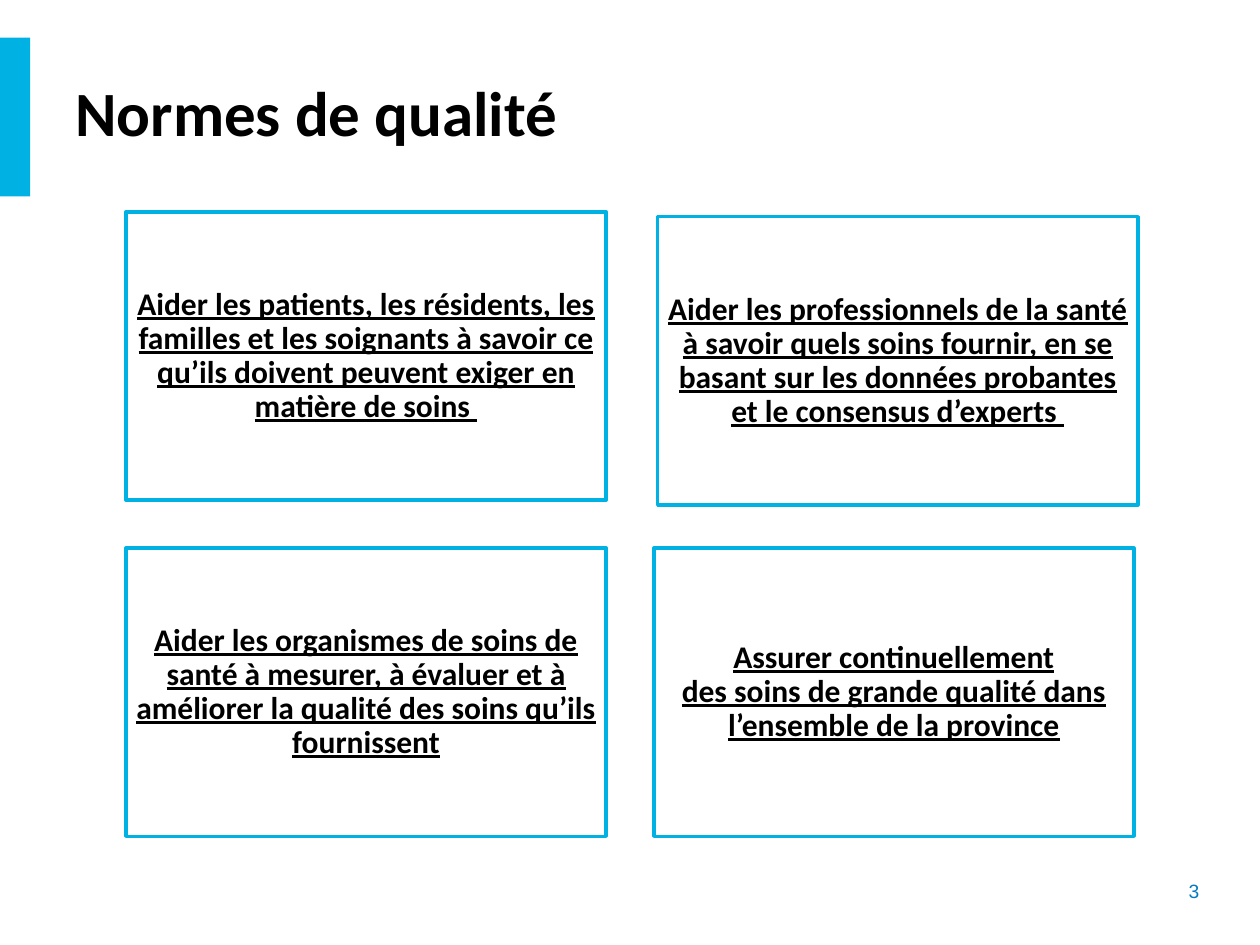
from dataclasses import dataclass

from pptx import Presentation
from pptx.dml.color import RGBColor
from pptx.enum.shapes import MSO_SHAPE
from pptx.enum.text import MSO_ANCHOR, PP_ALIGN
from pptx.util import Cm, Pt

RECT = MSO_SHAPE.RECTANGLE
MIDDLE, TOP = MSO_ANCHOR.MIDDLE, MSO_ANCHOR.TOP
LEFT, CENTER, RIGHT = PP_ALIGN.LEFT, PP_ALIGN.CENTER, PP_ALIGN.RIGHT


@dataclass(frozen=True)
class Theme:
    accent: RGBColor = RGBColor(0x00, 0xB2, 0xE3)
    number: RGBColor = RGBColor(0x04, 0x7B, 0xC1)
    ink: RGBColor = RGBColor(0, 0, 0)
    font: str = "Calibri"
    number_font: str = "Arial"
    title_size: int = 36
    card_size: int = 18
    number_size: int = 11
    border: int = 2


THEME = Theme()
CARD_W, CARD_H = 9.68, 5.81
CARDS = [
    (2.54, 4.27, [("Aider les patients, les résidents, les familles et les soignants à savoir ce "
                   "qu’ils doivent peuvent exiger en matière de soins ", True)]),
    (13.26, 4.37, [("Aider les professionnels de la santé à savoir quels soins fournir, en se "
                    "basant sur les données probantes et le consensus d’experts", True),
                   (" ", False)]),
    (2.54, 11.05, [("Aider les organismes de soins de santé à mesurer, à évaluer et à "
                    "améliorer la qualité des soins qu’ils fournissent", True)]),
    (13.18, 11.05, [("Assurer continuellement\ndes soins de grande qualité dans "
                     "l’ensemble de la province", True)]),
]


def add_run(p, text, size, color, font=THEME.font, bold=False, underline=False):
    for i, line in enumerate(text.split("\n")):
        if i:
            p.add_line_break()
        r = p.add_run()
        r.text = line
        r.font.name = font
        r.font.size = Pt(size)
        r.font.color.rgb = color
        r.font.bold = bold
        r.font.underline = underline


def add_rect(s, box):
    sp = s.shapes.add_shape(RECT, *map(Cm, box))
    sp.shadow.inherit = False
    return sp


def set_frame(sp, align, anchor):
    tf = sp.text_frame
    tf.word_wrap = True
    tf.vertical_anchor = anchor
    p = tf.paragraphs[0]
    p.alignment = align
    return tf, p


def add_header(s, x, y, w, h):
    bar = add_rect(s, (x, y, 0.61, h))
    bar.fill.solid()
    bar.fill.fore_color.rgb = THEME.accent
    bar.line.fill.background()
    title = s.shapes.add_textbox(Cm(x + 1.27), Cm(y + 0.51), Cm(w - 1.27), Cm(1.96))
    tf, p = set_frame(title, LEFT, MIDDLE)
    add_run(p, "Normes de qualité", THEME.title_size, THEME.ink, bold=True)


def add_card(s, x, y, w, h, runs):
    sp = add_rect(s, (x, y, w, h))
    sp.fill.background()
    sp.line.color.rgb = THEME.accent
    sp.line.width = Pt(THEME.border)
    tf, p = set_frame(sp, CENTER, MIDDLE)
    tf.margin_left = tf.margin_right = tf.margin_top = tf.margin_bottom = Cm(0.18)
    p.line_spacing = 0.9
    for text, bold in runs:
        add_run(p, text, THEME.card_size, THEME.ink, bold=bold, underline=True)


def add_page_number(s, x, y, w, h):
    sp = s.shapes.add_textbox(Cm(x), Cm(y), Cm(w), Cm(h))
    tf, p = set_frame(sp, RIGHT, TOP)
    add_run(p, "3", THEME.number_size, THEME.number, THEME.number_font)


def main():
    prs = Presentation()
    prs.slide_width, prs.slide_height = Cm(25.4), Cm(19.05)
    s = prs.slides.add_slide(prs.slide_layouts[6])
    add_page_number(s, 21.46, 17.6, 2.97, 0.74)
    add_header(s, 0, 0.76, 21.11, 3.2)
    for x, y, runs in CARDS:
        add_card(s, x, y, CARD_W, CARD_H, runs)
    prs.save("out.pptx")


if __name__ == "__main__":
    main()
